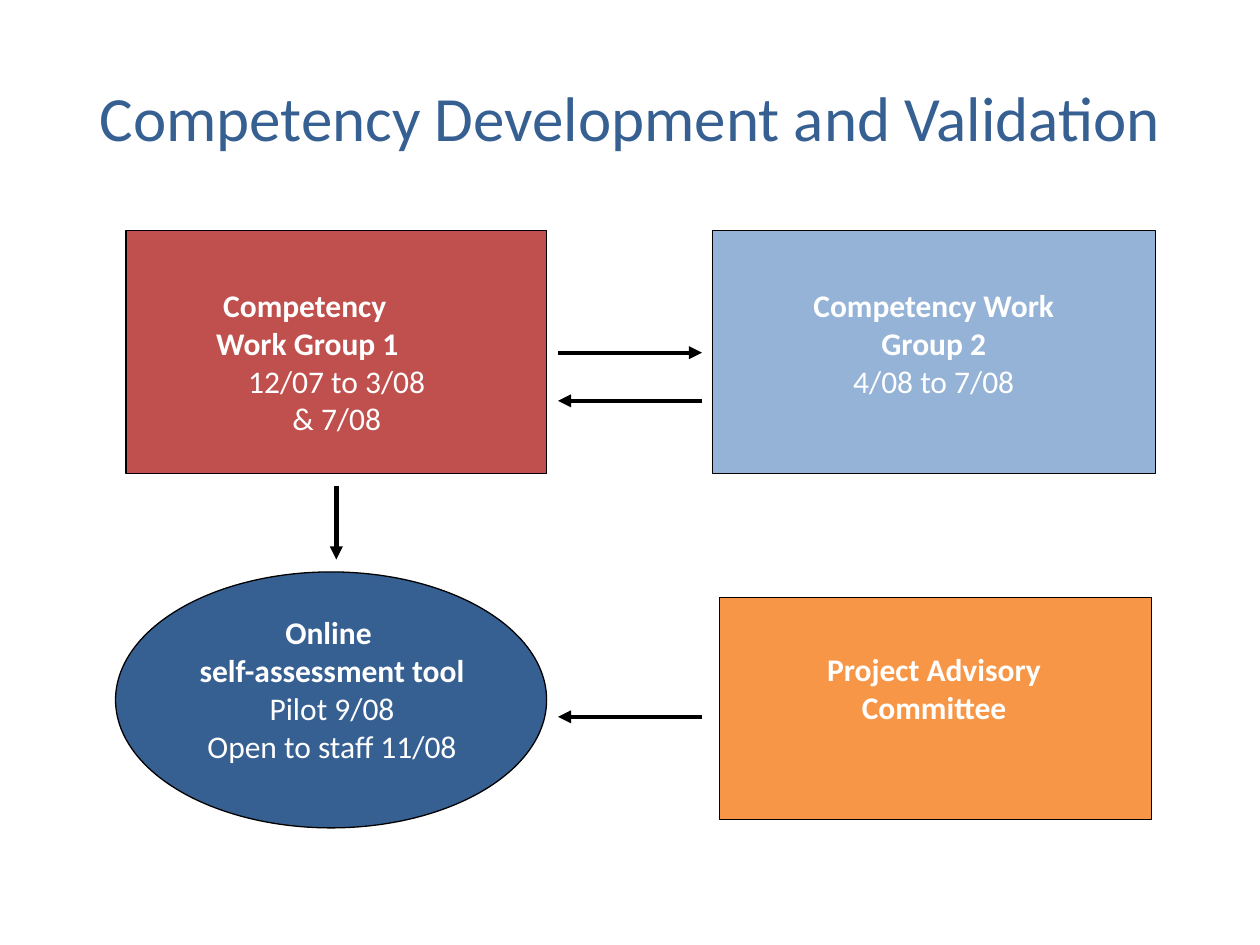
from dataclasses import dataclass

from lxml.etree import SubElement
from pptx import Presentation
from pptx.dml.color import RGBColor
from pptx.enum.shapes import MSO_CONNECTOR, MSO_SHAPE
from pptx.enum.text import MSO_ANCHOR, PP_ALIGN
from pptx.oxml.ns import qn
from pptx.util import Cm, Pt

FONT = "Calibri"
BLACK, WHITE, NAVY = "000000", "FFFFFF", "376092"


@dataclass
class Area:
    left: float
    top: float
    width: float
    height: float

    def lengths(self) -> tuple:
        return Cm(self.left), Cm(self.top), Cm(self.width), Cm(self.height)


@dataclass
class Stage:
    outline: MSO_SHAPE
    fill: str
    area: Area
    label_area: Area
    heading: str
    dates: tuple = ()
    heading_align: PP_ALIGN = PP_ALIGN.CENTER
    heading_indent: float = 0


@dataclass
class Arrow:
    start: tuple
    end: tuple


def color(value: str) -> RGBColor:
    return RGBColor.from_string(value)


def set_font(paragraph, size: int, value: str, bold: bool = False) -> None:
    font = paragraph.font
    font.name, font.size, font.bold = FONT, Pt(size), bold
    font.color.rgb = color(value)


def draw_stage(slide, stage: Stage) -> None:
    body = slide.shapes.add_shape(stage.outline, *stage.area.lengths())
    body.shadow.inherit = False
    body.fill.solid()
    body.fill.fore_color.rgb = color(stage.fill)
    body.line.color.rgb = color(BLACK)
    body.line.width = Pt(0.75)

    frame = slide.shapes.add_textbox(*stage.label_area.lengths()).text_frame
    frame.word_wrap = True
    frame.text = "\n".join((stage.heading, *stage.dates))
    for paragraph in frame.paragraphs:
        paragraph.alignment = PP_ALIGN.CENTER
        set_font(paragraph, 18, WHITE)
    heading = frame.paragraphs[0]
    heading.font.bold = True
    heading.alignment = stage.heading_align
    if stage.heading_indent:
        heading._p.get_or_add_pPr().set("indent", str(Cm(stage.heading_indent)))


def draw_arrow(slide, arrow: Arrow) -> None:
    ends = [Cm(value) for value in (*arrow.start, *arrow.end)]
    connector = slide.shapes.add_connector(MSO_CONNECTOR.STRAIGHT, *ends)
    connector.line.color.rgb = color(BLACK)
    connector.line.width = Pt(2.5)
    SubElement(connector.line._get_or_add_ln(), qn("a:tailEnd"), type="triangle")
    SubElement(connector._element.spPr, qn("a:effectLst"))


# Content: two work groups, the tool they lead to, and the committee
STAGES = [
    Stage(MSO_SHAPE.RECTANGLE, "C0504D", Area(2.54, 4.65, 8.48, 4.9),
          Area(4.11, 5.64, 5.36, 3.33), "Competency Work Group 1",
          ("12/07 to 3/08", "& 7/08"), PP_ALIGN.LEFT, 0.14),
    Stage(MSO_SHAPE.RECTANGLE, "95B3D7", Area(14.37, 4.65, 8.92, 4.9),
          Area(15.93, 5.64, 5.79, 2.57), "Competency Work Group 2",
          ("4/08 to 7/08",)),
    Stage(MSO_SHAPE.OVAL, NAVY, Area(2.33, 11.53, 8.69, 5.16),
          Area(2.57, 12.24, 8.25, 3.07), "Online \vself-assessment tool",
          ("Pilot 9/08", "Open to staff 11/08")),
    Stage(MSO_SHAPE.RECTANGLE, "F79646", Area(14.5, 12.05, 8.71, 4.47),
          Area(16.15, 12.98, 5.36, 2.36), "Project Advisory Committee"),
]

# Horizontal arrows all span the same gap between the columns
GAP_LEFT, GAP_RIGHT = 11.25, 14.15
ARROWS = [
    Arrow((GAP_LEFT, 7.11), (GAP_RIGHT, 7.11)),
    Arrow((GAP_RIGHT, 8.08), (GAP_LEFT, 8.08)),
    Arrow((6.78, 9.8), (6.78, 11.28)),
    Arrow((GAP_RIGHT, 14.45), (GAP_LEFT, 14.45)),
]


def main() -> None:
    presentation = Presentation()
    presentation.slide_width, presentation.slide_height = Cm(25.4), Cm(19.05)
    slide = presentation.slides.add_slide(presentation.slide_layouts[5])

    # Title
    title = slide.shapes.title
    title.left, title.top, title.width, title.height = Area(
        1.27, 0.76, 22.86, 3.18).lengths()
    title.text_frame.text = "Competency Development and Validation"
    title.text_frame.vertical_anchor = MSO_ANCHOR.MIDDLE
    title_line = title.text_frame.paragraphs[0]
    title_line.alignment = PP_ALIGN.CENTER
    set_font(title_line, 36, NAVY)

    # Diagram
    for stage in STAGES:
        draw_stage(slide, stage)
    for arrow in ARROWS:
        draw_arrow(slide, arrow)

    presentation.save("out.pptx")


if __name__ == "__main__":
    main()
